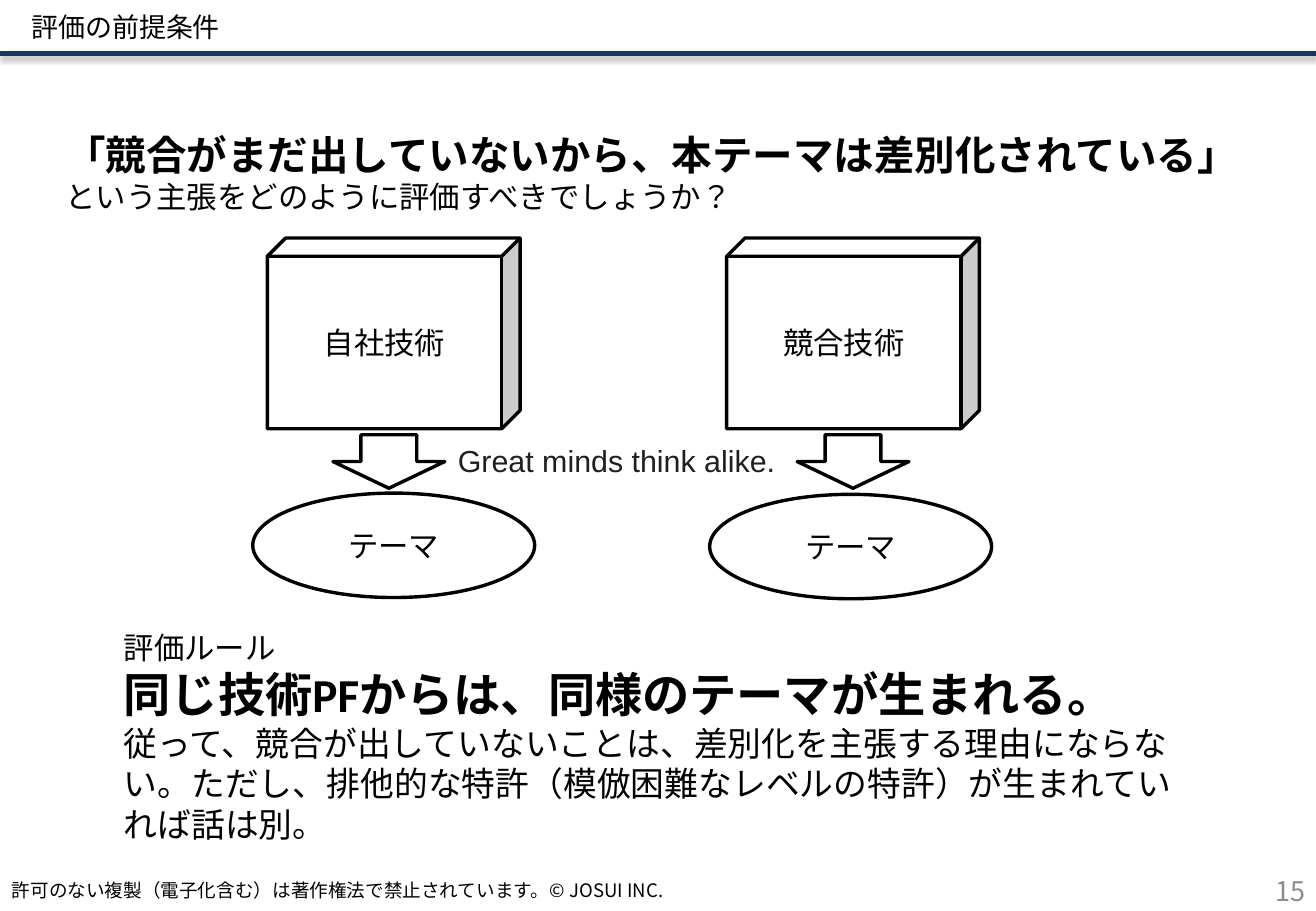
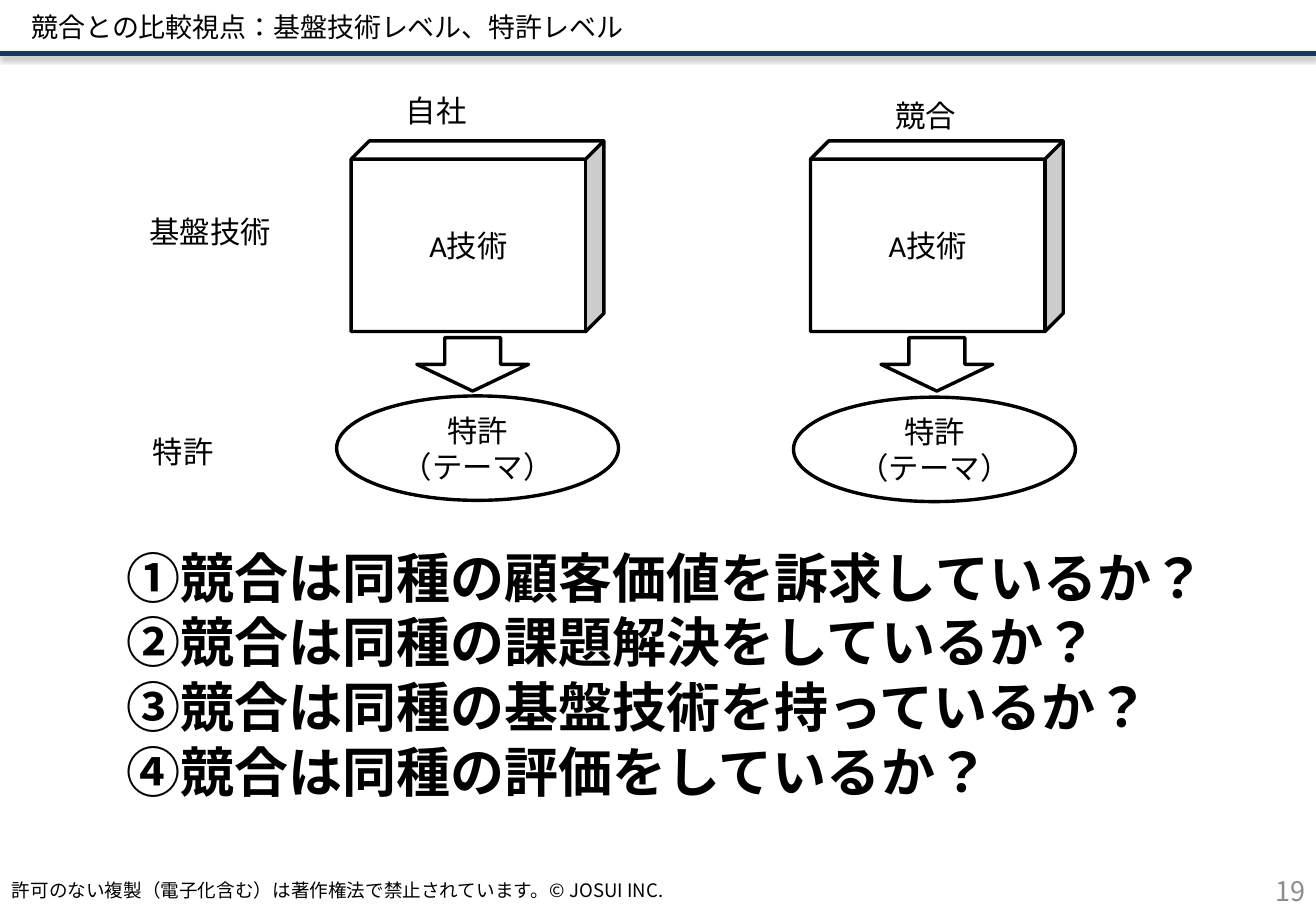
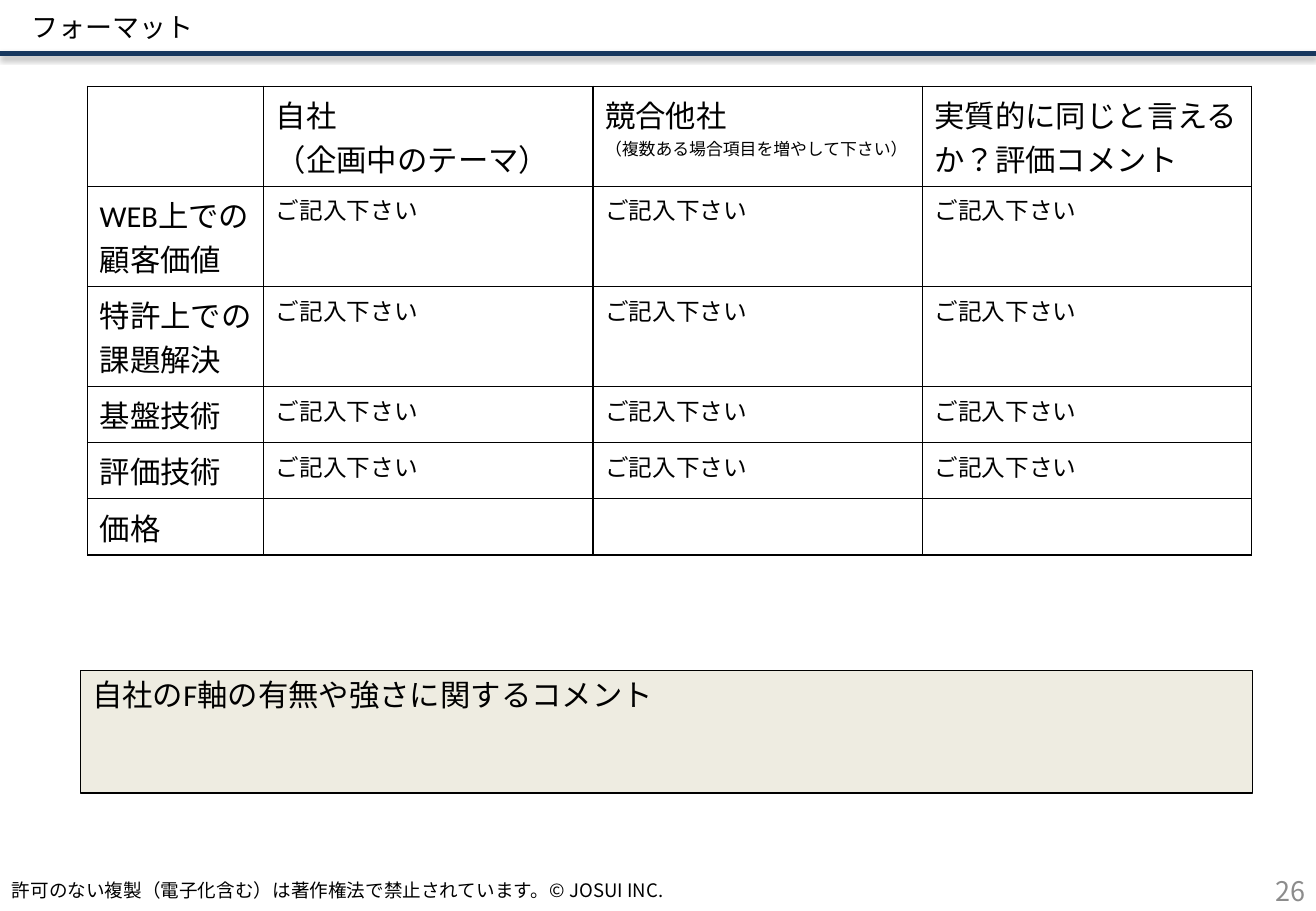
"""Build three slides on judging a theme against a competitor's technology."""
import lxml.etree
import pptx
import pptx.chart.data
import pptx.dml.color
import pptx.enum.lang
import pptx.enum.shapes
import pptx.enum.text
import pptx.oxml
import pptx.oxml.ns
import pptx.util

PX = 9144
COLORS = {
    "ink": "000000", "paper": "FFFFFF", "rule": "17375E",
    "number": "8C8C8C", "quote": "1F1F1F", "note": "EEECE1",
}
LATIN, ASIAN, QUOTE_FONT = "Calibri", "Noto Sans CJK JP", "Arial"
SHAPE = pptx.enum.shapes.MSO_SHAPE
ALIGN = pptx.enum.text.PP_ALIGN
ANCHOR = pptx.enum.text.MSO_ANCHOR
FIT = pptx.enum.text.MSO_AUTO_SIZE

FOOTER = "許可のない複製（電子化含む）は著作権法で禁止されています。© JOSUI INC."

PREMISE = {
    "title": "評価の前提条件", "number": "15", "origin": (220, 196),
    "technologies": ["自社技術", "競合技術"],
    "outcome": [("テーマ", 18)],
    "texts": [
        {"at": (44, 102, 996, 81), "wrap": False, "lines": [
            ("「競合がまだ出していないから、本テーマは差別化されている」", 24, True),
            ("という主張をどのように評価すべきでしょうか？", 18)]},
        {"at": (92, 513, 898, 188), "lines": [
            ("評価ルール", 18),
            ("同じ技術PFからは、同様のテーマが生まれる。", 28, True),
            ("従って、競合が出していないことは、差別化を主張する理由にならない。"
             "ただし、排他的な特許（模倣困難なレベルの特許）が生まれていれば話は別。", 20)]},
        {"at": (367, 359, 307, 40), "font": QUOTE_FONT, "color": "quote",
         "lines": [("Great minds think alike.", 18)]},
    ],
}
COMPARISON = {
    "title": "競合との比較視点：基盤技術レベル、特許レベル", "number": "19", "origin": (289, 116),
    "technologies": ["A技術", "A技術"],
    "outcome": [("特許", 18), ("（テーマ）", 18)],
    "texts": [
        {"at": (113, 171, 121, 40), "wrap": False, "lines": [("基盤技術", 18)]},
        {"at": (116, 352, 71, 40), "wrap": False, "lines": [("特許", 18)]},
        {"at": (324, 71, 143, 40), "lines": [("自社", 18)]},
        {"at": (727, 75, 143, 40), "lines": [("競合", 18)]},
        {"at": (94, 443, 918, 226), "wrap": False, "lines": [
            ("①競合は同種の顧客価値を訴求しているか？", 32, True),
            ("②競合は同種の課題解決をしているか？", 32, True),
            ("③競合は同種の基盤技術を持っているか？", 32, True),
            ("④競合は同種の評価をしているか？", 32, True)]},
    ],
}
ENTRY = [("ご記入下さい", 14)]
FORM = {
    "title": "フォーマット", "number": "26",
    "columns": [145, 271, 271, 271], "row": 41,
    "rows": [
        [[], [("自社\n（企画中のテーマ）", 18)],
         [("競合他社", 18), ("（複数ある場合項目を増やして下さい）", 10)],
         [("実質的に同じと言えるか？評価コメント", 18)]],
        [[("WEB上での顧客価値", 18)]] + [ENTRY] * 3,
        [[("特許上での課題解決", 18)]] + [ENTRY] * 3,
        [[("基盤技術", 18)]] + [ENTRY] * 3,
        [[("評価技術", 18)]] + [ENTRY] * 3,
        [[("価格", 18)], [], [], []],
    ],
    "comment": [("自社のF軸の有無や強さに関するコメント", 18)],
}


def px(*values):
    return [pptx.util.Emu(value * PX) for value in values]


def rgb(name):
    return pptx.dml.color.RGBColor.from_string(COLORS[name])


def write(frame, lines, font=LATIN, color="ink", align=ALIGN.LEFT):
    for index, (text, size, *bold) in enumerate(lines):
        para = frame.paragraphs[0] if index == 0 else frame.add_paragraph()
        para.text = text
        para.alignment = align
        for span in para.runs:
            span.font.name = font
            span.font.size = pptx.util.Pt(size)
            span.font.bold = bool(bold)
            span.font.color.rgb = rgb(color)
            span.font.language_id = pptx.enum.lang.MSO_LANGUAGE_ID.JAPANESE
            asian = pptx.oxml.ns.qn("a:ea")
            lxml.etree.SubElement(span.font._element, asian, typeface=ASIAN)


def add_text(page, at, lines, wrap=True, anchor=ANCHOR.TOP, fit=FIT.SHAPE_TO_FIT_TEXT, **style):
    frame = page.shapes.add_textbox(*px(*at)).text_frame
    frame.word_wrap = wrap
    frame.auto_size = fit
    frame.vertical_anchor = anchor
    write(frame, lines, **style)


def add_box(page, kind, at, lines=(), fill="paper", width=2, anchor=ANCHOR.MIDDLE,
            align=ALIGN.CENTER):
    box = page.shapes.add_shape(kind, *px(*at))
    box.shadow.inherit = False
    box.fill.solid()
    box.fill.fore_color.rgb = rgb(fill)
    box.line.color.rgb = rgb("ink")
    box.line.width = pptx.util.Pt(width)
    box.text_frame.vertical_anchor = anchor
    write(box.text_frame, lines, align=align)
    return box


def add_rule(page):
    rule = page.shapes.add_connector(
        pptx.enum.shapes.MSO_CONNECTOR.STRAIGHT, *px(0, 44, 1083, 44))
    rule.line.color.rgb = rgb("rule")
    rule.line.width = pptx.util.Pt(3)
    rule._element.spPr.append(pptx.oxml.parse_xml(
        f'<a:effectLst {pptx.oxml.ns.nsdecls("a")}>'
        '<a:outerShdw blurRad="40000" dist="23000" dir="5400000" rotWithShape="0">'
        f'<a:srgbClr val="{COLORS["ink"]}"><a:alpha val="35000"/></a:srgbClr>'
        '</a:outerShdw></a:effectLst>'))


def add_page(deck, content):
    page = deck.slides.add_slide(deck.slide_layouts[5])
    add_rule(page)
    title = page.shapes.title
    title.left, title.top, title.width, title.height = px(16, 0, 959, 44)
    title.text_frame.auto_size = FIT.NONE
    title.text_frame.vertical_anchor = ANCHOR.MIDDLE
    write(title.text_frame, [(content["title"], 16)], font=ASIAN)
    furniture = {"font": ASIAN, "anchor": ANCHOR.MIDDLE, "fit": FIT.NONE}
    add_text(page, (0, 715, 1070, 35), [(FOOTER, 11)], **furniture)
    add_text(page, (831, 716, 253, 35), [(content["number"], 16)],
             color="number", align=ALIGN.RIGHT, **furniture)
    return page


def add_flow_page(deck, content):
    page = add_page(deck, content)
    left, top = content["origin"]
    for index, technology in enumerate(content["technologies"]):
        cube = add_box(page, SHAPE.CUBE, (left + 378 * index, top, 208, 157), [(technology, 18)])
        cube.adjustments[0] = 0.096
        add_box(page, SHAPE.DOWN_ARROW, (left + 54 + 382 * index, top + 162, 92, 44))
        add_box(page, SHAPE.OVAL, (left - 12 + 376 * index, top + 210 + index, 232, 86),
                content["outcome"])
    for text in content["texts"]:
        add_text(page, **text)


def add_borders(cell):
    for side in ("lnL", "lnR", "lnT", "lnB"):
        cell._tc.get_or_add_tcPr().append(pptx.oxml.parse_xml(
            f'<a:{side} {pptx.oxml.ns.nsdecls("a")} w="12700"><a:solidFill>'
            f'<a:srgbClr val="{COLORS["ink"]}"/></a:solidFill></a:{side}>'))


def add_form_page(deck, content):
    page = add_page(deck, content)
    rows, columns = content["rows"], content["columns"]
    size = (sum(columns), content["row"] * len(rows))
    table = page.shapes.add_table(len(rows), len(columns), *px(72, 71, *size)).table
    table.first_row = table.horz_banding = False
    for column, width in zip(table.columns, px(*columns)):
        column.width = width
    for row, entries in zip(table.rows, rows):
        for cell, lines in zip(row.cells, entries):
            add_borders(cell)
            cell.fill.background()
            write(cell.text_frame, lines)
    add_box(page, SHAPE.RECTANGLE, (66, 552, 965, 101), content["comment"], fill="note",
            width=0.75, anchor=ANCHOR.TOP, align=ALIGN.LEFT)


def main():
    deck = pptx.Presentation()
    deck.slide_width, deck.slide_height = px(1083, 750)
    add_flow_page(deck, PREMISE)
    add_flow_page(deck, COMPARISON)
    add_form_page(deck, FORM)
    deck.save("out.pptx")


if __name__ == "__main__":
    main()
